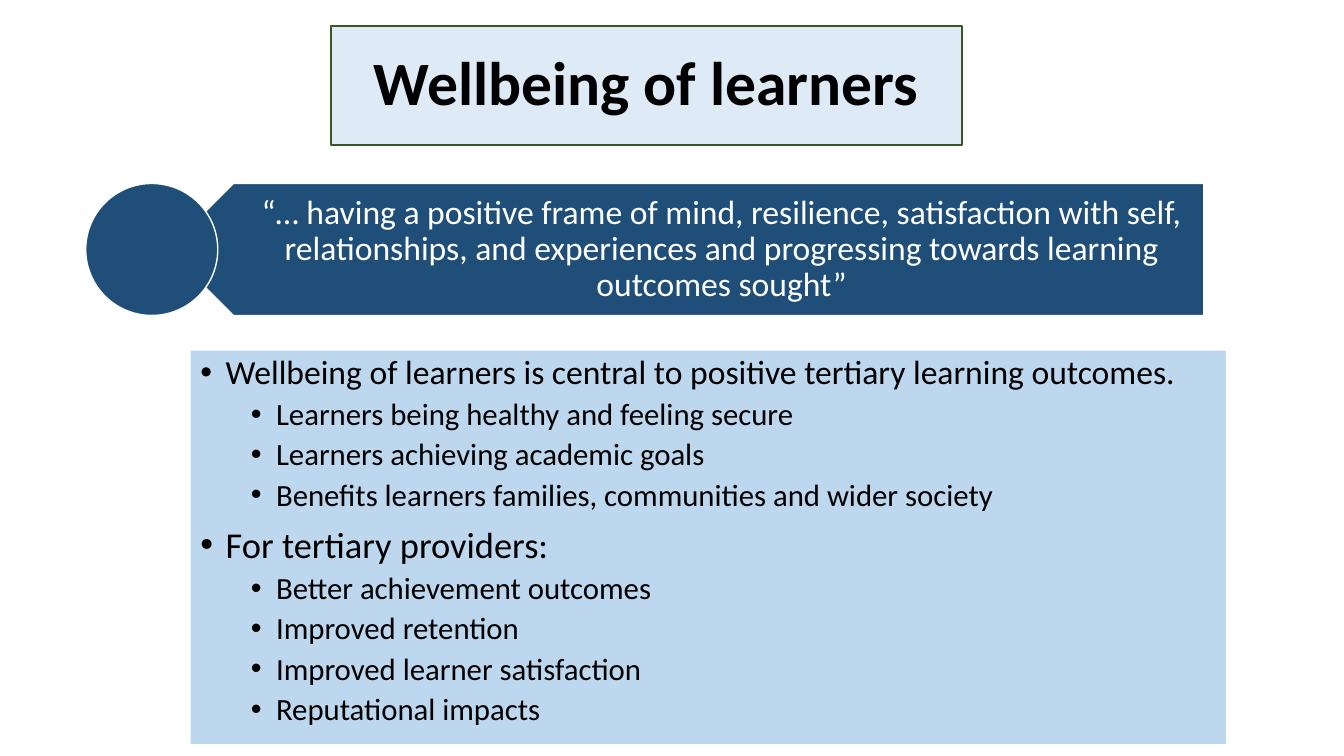
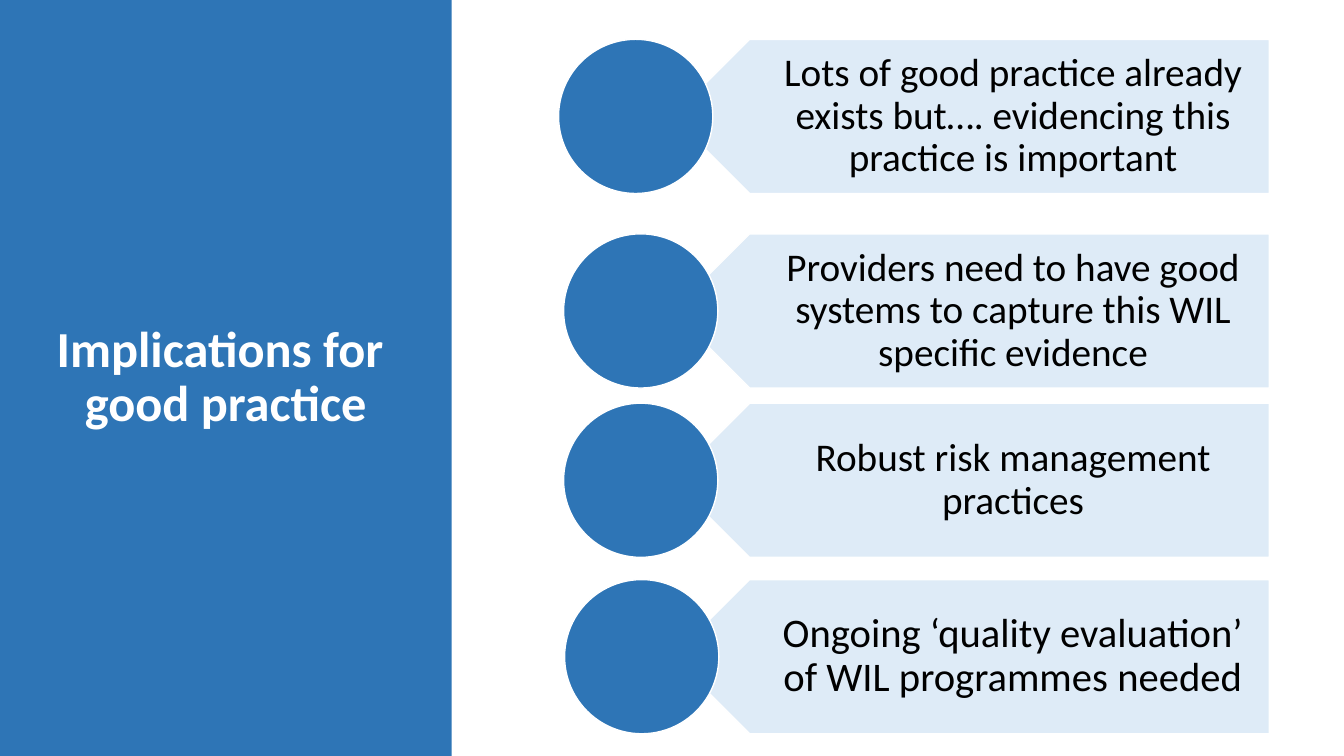
"""Build two slides on learner wellbeing and good practice."""
from lxml.etree import SubElement
from pptx import Presentation
from pptx.dml.color import RGBColor
from pptx.enum.shapes import MSO_SHAPE
from pptx.enum.text import MSO_ANCHOR, PP_ALIGN
from pptx.oxml.ns import qn
from pptx.util import Inches, Pt

FONT = "Calibri"
BLACK = RGBColor(0x00, 0x00, 0x00)
WHITE = RGBColor(0xFF, 0xFF, 0xFF)
PALE_BLUE = RGBColor(0xDE, 0xEB, 0xF7)
LIGHT_BLUE = RGBColor(0xBD, 0xD7, 0xEE)
MID_BLUE = RGBColor(0x2E, 0x75, 0xB6)
DARK_BLUE = RGBColor(0x1F, 0x4E, 0x79)
DARK_GREEN = RGBColor(0x38, 0x57, 0x23)

QUOTE = (
    "“… having a positive frame of mind, resilience, satisfaction with self, "
    "relationships, and experiences and progressing towards learning outcomes sought”"
)
WELLBEING_POINTS = [
    (0, "Wellbeing of learners is central to positive tertiary learning outcomes.", 24),
    (1, "Learners being healthy and feeling secure", 22),
    (1, "Learners achieving academic goals", 22),
    (1, "Benefits learners families, communities and wider society", 22),
    (0, "For tertiary providers:", 26),
    (1, "Better achievement outcomes", 22),
    (1, "Improved retention", 22),
    (1, "Improved learner satisfaction", 22),
    (1, "Reputational impacts", 22),
]
IMPLICATIONS = [
    (5.54, 0.39, "Lots of good practice already exists but…. evidencing this practice is important", 28),
    (5.59, 2.32, "Providers need to have good systems to capture this WIL specific evidence", 28),
    (5.59, 4, "Robust risk management practices", 28),
    (5.6, 5.75, "Ongoing ‘quality evaluation’ of WIL programmes needed", 29),
]


def add_box(slide, kind, left, top, width, height, fill, line=None, line_width=1):
    shape = slide.shapes.add_shape(kind, Inches(left), Inches(top), Inches(width), Inches(height))
    shape.shadow.inherit = False
    shape.fill.solid()
    shape.fill.fore_color.rgb = fill
    if line is None:
        shape.line.fill.background()
    else:
        shape.line.color.rgb = line
        shape.line.width = Pt(line_width)
    return shape


def add_run(paragraph, text, size, color, bold=False):
    run = paragraph.add_run()
    run.text = text
    run.font.name = FONT
    run.font.size = Pt(size)
    run.font.bold = bold
    run.font.color.rgb = color


def center_text(shape, lines, size, color, bold=False):
    frame = shape.text_frame
    frame.word_wrap = True
    frame.vertical_anchor = MSO_ANCHOR.MIDDLE
    paragraph = frame.paragraphs[0]
    paragraph.alignment = PP_ALIGN.CENTER
    paragraph.line_spacing = 0.9
    for index, line in enumerate(lines):
        if index:
            paragraph.add_line_break()
        add_run(paragraph, line, size, color, bold)


def add_title(slide, bounds, lines, size, fill, color, line=None):
    title = add_box(slide, MSO_SHAPE.RECTANGLE, *bounds, fill, line, 1.5)
    center_text(title, lines, size, color, bold=True)


def add_bullet(paragraph, level, text, size):
    paragraph.level = level
    paragraph.alignment = PP_ALIGN.LEFT
    paragraph.line_spacing = 0.9
    paragraph.space_before = Pt(5 if level else 10)
    add_run(paragraph, text, size, BLACK)
    properties = paragraph._p.get_or_add_pPr()
    properties.set("marL", str(Inches(0.25 + 0.5 * level)))
    properties.set("indent", str(Inches(-0.25)))
    SubElement(properties, qn("a:buFont")).set("typeface", "Arial")
    SubElement(properties, qn("a:buChar")).set("char", "•")


def add_bullet_panel(slide, bounds, points):
    panel = add_box(slide, MSO_SHAPE.RECTANGLE, *bounds, LIGHT_BLUE)
    frame = panel.text_frame
    frame.word_wrap = True
    frame.vertical_anchor = MSO_ANCHOR.TOP
    for index, point in enumerate(points):
        paragraph = frame.add_paragraph() if index else frame.paragraphs[0]
        add_bullet(paragraph, *point)


def add_banner(slide, bounds, circle_left, text, size, band_color, circle_color, text_color):
    left, top, width, height = bounds
    band = add_box(slide, MSO_SHAPE.PENTAGON, *bounds, band_color, WHITE)
    band.rotation = 180
    point = height / 4
    label = slide.shapes.add_textbox(
        Inches(left + point), Inches(top), Inches(width - point), Inches(height)
    )
    frame = label.text_frame
    frame.margin_left = Inches(height * 0.44)
    frame.margin_right = Inches(height * 0.145)
    frame.margin_top = frame.margin_bottom = Inches(height * 0.08)
    center_text(label, [text], size, text_color)
    add_box(slide, MSO_SHAPE.OVAL, circle_left, top, height, height, circle_color, WHITE)


def add_wellbeing_slide(presentation):
    slide = presentation.slides.add_slide(presentation.slide_layouts[6])
    add_title(slide, (3.28, 0.26, 6.26, 1.18), ["Wellbeing of learners"], 44,
              PALE_BLUE, BLACK, DARK_GREEN)
    add_bullet_panel(slide, (1.89, 3.48, 10.27, 3.9), WELLBEING_POINTS)
    add_banner(slide, (1.66, 1.82, 10.28, 1.31), 0.85, QUOTE, 24, DARK_BLUE, DARK_BLUE, WHITE)


def add_implications_slide(presentation):
    slide = presentation.slides.add_slide(presentation.slide_layouts[6])
    add_title(slide, (0, 0, 4.48, 7.5), ["Implications for ", "good practice"], 36,
              MID_BLUE, WHITE)
    for circle_left, top, text, size in IMPLICATIONS:
        add_banner(slide, (6.67, top, 5.92, 1.53), circle_left, text, size,
                   PALE_BLUE, MID_BLUE, BLACK)


def main():
    presentation = Presentation()
    presentation.slide_width = Inches(13.33)
    presentation.slide_height = Inches(7.5)
    add_wellbeing_slide(presentation)
    add_implications_slide(presentation)
    presentation.save("out.pptx")


if __name__ == "__main__":
    main()
